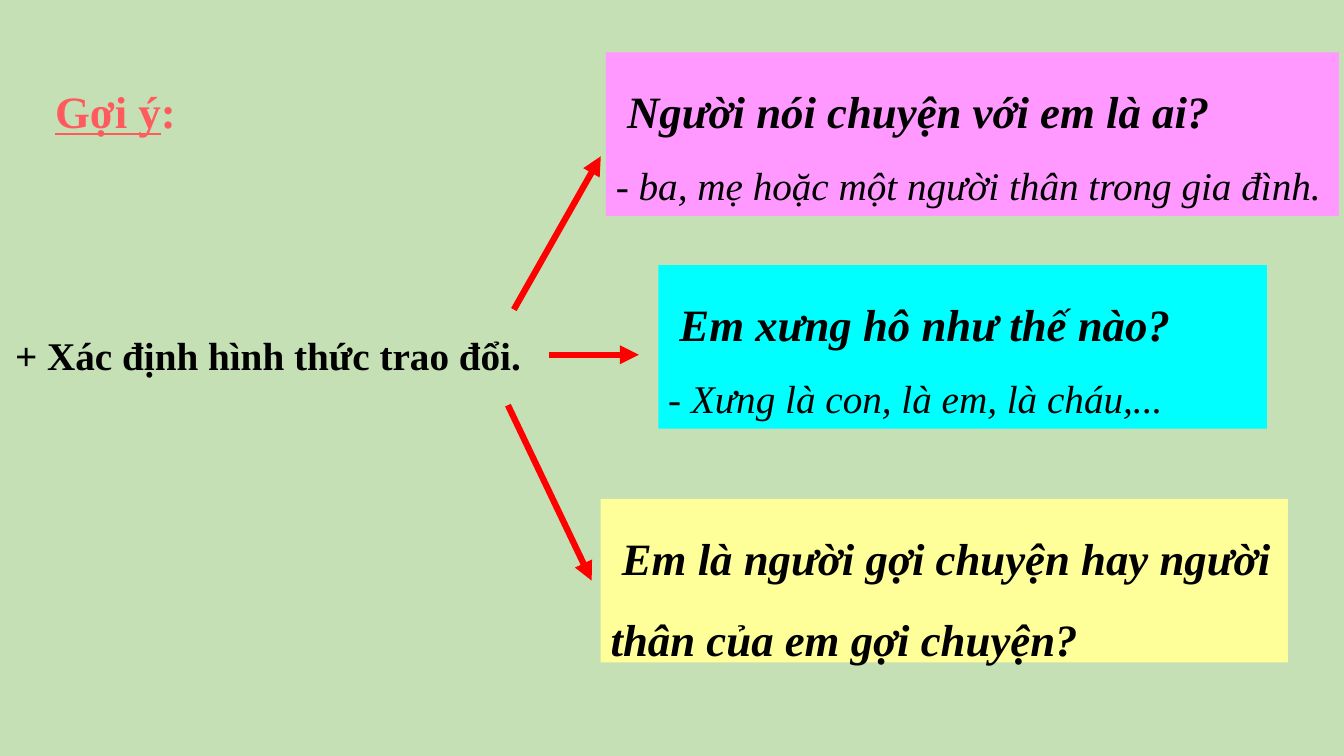
from dataclasses import dataclass

from lxml import etree
from pptx import Presentation
from pptx.dml.color import RGBColor
from pptx.enum.shapes import MSO_CONNECTOR, MSO_SHAPE
from pptx.enum.text import MSO_ANCHOR, PP_ALIGN
from pptx.oxml.ns import qn
from pptx.slide import Slide
from pptx.text.text import TextFrame
from pptx.util import Cm, Pt

RECTANGLE = MSO_SHAPE.RECTANGLE
STRAIGHT = MSO_CONNECTOR.STRAIGHT
TOP = MSO_ANCHOR.TOP
LEFT = PP_ALIGN.LEFT

FONT = "Times New Roman"
BLACK = "000000"
CORAL = "FF5B5F"
RED = "FF0000"
GREEN = "C5E0B4"
BOX_HEIGHT = 4.12
LABEL_HEIGHT = 2.06


@dataclass(frozen=True)
class Line:
    text: str
    size: int
    bold: bool = True
    italic: bool = False
    color: str = BLACK


@dataclass(frozen=True)
class Label:
    left: float
    top: float
    width: float
    line: Line


@dataclass(frozen=True)
class Question:
    left: float
    top: float
    width: float
    fill: str
    lines: tuple[Line, ...]


@dataclass(frozen=True)
class Arrow:
    start: tuple[float, float]
    end: tuple[float, float]


def question_line(text: str) -> Line:
    return Line(text, 32, italic=True)


def answer_line(text: str) -> Line:
    return Line(text, 28, bold=False, italic=True)


HINT = Label(1.14, 1.32, 4.09, Line("Gợi ý", 32, color=CORAL))
TASK = Label(0.13, 7.62, 13.51, Line("+ Xác định hình thức trao đổi.", 28))

QUESTIONS = (
    Question(15.27, 1.32, 18.47, "FF99FF", (
        question_line(" Người nói chuyện với em là ai?"),
        answer_line("- ba, mẹ hoặc một người thân trong gia đình."),
    )),
    Question(16.59, 6.68, 15.34, "00FFFF", (
        question_line(" Em xưng hô như thế nào?"),
        answer_line("- Xưng là con, là em, là cháu,..."),
    )),
    Question(15.14, 12.57, 17.32, "FFFF99", (
        question_line(" Em là người gợi chuyện hay người thân của em gợi chuyện?"),
    )),
)

ARROWS = (
    Arrow((12.95, 7.8), (15.14, 3.94)),
    Arrow((13.84, 8.94), (16.1, 8.94)),
    Arrow((12.8, 10.21), (14.91, 14.63)),
)


def rgb(value: str) -> RGBColor:
    return RGBColor.from_string(value)


def write_lines(frame: TextFrame, lines: tuple[Line, ...]) -> None:
    frame.word_wrap = True
    frame.vertical_anchor = TOP
    for index, line in enumerate(lines):
        paragraph = frame.add_paragraph() if index else frame.paragraphs[0]
        paragraph.text = line.text
        paragraph.alignment = LEFT
        paragraph.line_spacing = 1.5
        font = paragraph.font
        font.name = FONT
        font.size = Pt(line.size)
        font.bold = line.bold
        font.italic = line.italic
        font.color.rgb = rgb(line.color)
        for run in paragraph.runs:
            run.font.name = FONT
            run.font.size = Pt(line.size)
            run.font.bold = line.bold
            run.font.italic = line.italic
            run.font.color.rgb = rgb(line.color)


def draw_label(slide: Slide, label: Label) -> TextFrame:
    box = slide.shapes.add_textbox(
        Cm(label.left), Cm(label.top), Cm(label.width), Cm(LABEL_HEIGHT)
    )
    write_lines(box.text_frame, (label.line,))
    return box.text_frame


def draw_hint(slide: Slide) -> None:
    paragraph = draw_label(slide, HINT).paragraphs[0]
    paragraph.runs[0].font.underline = True
    colon = paragraph.add_run()
    colon.text = ":"
    colon.font.name = FONT
    colon.font.size = Pt(HINT.line.size)
    colon.font.bold = True
    colon.font.color.rgb = rgb(CORAL)


def draw_question(slide: Slide, question: Question) -> None:
    box = slide.shapes.add_shape(
        RECTANGLE,
        Cm(question.left), Cm(question.top), Cm(question.width), Cm(BOX_HEIGHT),
    )
    box.shadow.inherit = False
    box.fill.solid()
    box.fill.fore_color.rgb = rgb(question.fill)
    box.line.fill.background()
    write_lines(box.text_frame, question.lines)


def draw_arrow(slide: Slide, arrow: Arrow) -> None:
    connector = slide.shapes.add_connector(
        STRAIGHT, *(Cm(value) for value in arrow.start + arrow.end)
    )
    connector.line.color.rgb = rgb(RED)
    connector.line.width = Pt(4.5)
    outline = connector.line._get_or_add_ln()
    etree.SubElement(outline, qn("a:tailEnd"), type="triangle")
    etree.SubElement(connector._element.spPr, qn("a:effectLst"))


def main() -> None:
    presentation = Presentation()
    presentation.slide_width = Cm(33.87)
    presentation.slide_height = Cm(19.05)
    slide = presentation.slides.add_slide(presentation.slide_layouts[6])
    slide.background.fill.solid()
    slide.background.fill.fore_color.rgb = rgb(GREEN)

    draw_hint(slide)
    draw_label(slide, TASK)
    for question in QUESTIONS:
        draw_question(slide, question)
    for arrow in ARROWS:
        draw_arrow(slide, arrow)

    presentation.save("out.pptx")


if __name__ == "__main__":
    main()
